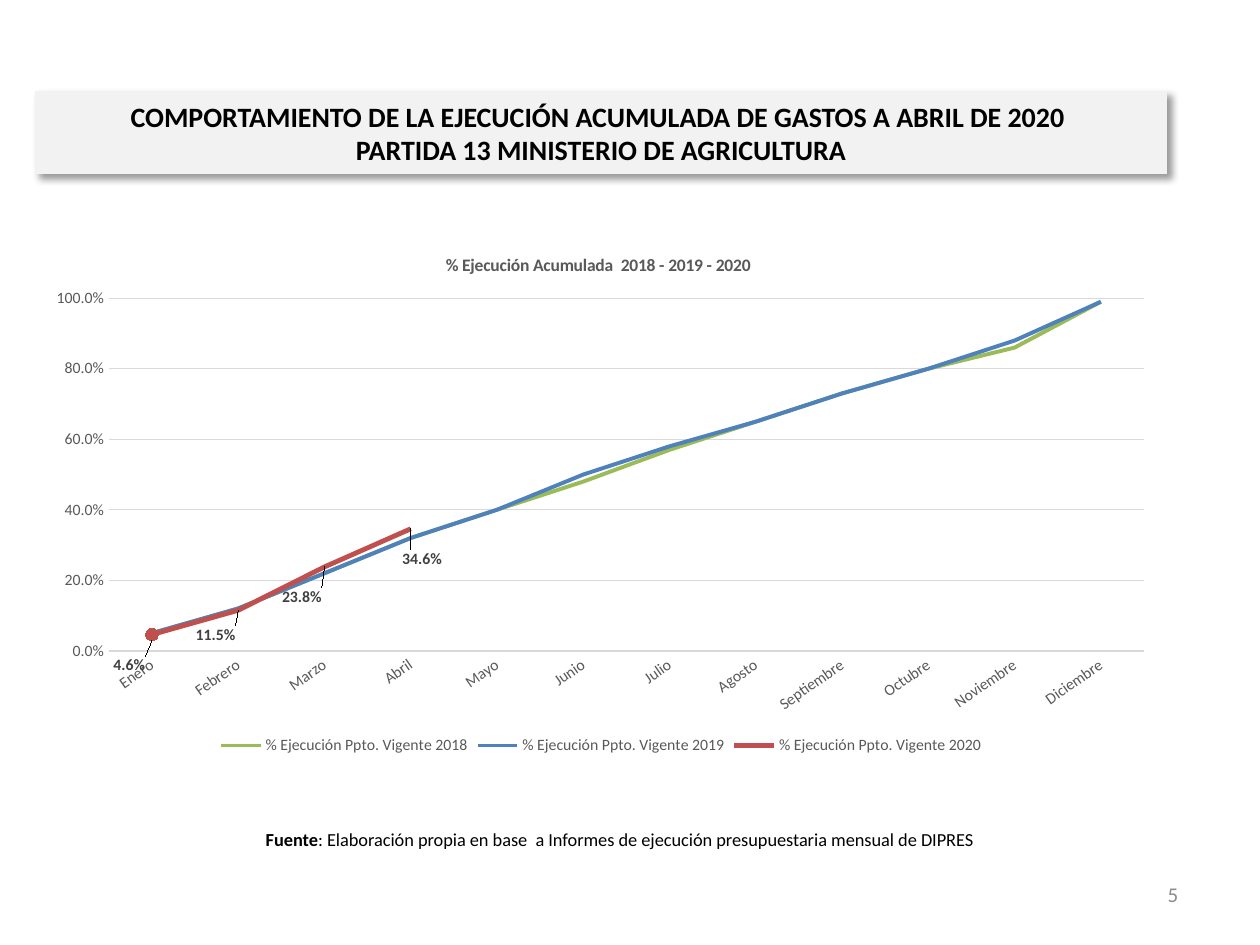
from lxml.etree import SubElement
from pptx import Presentation
from pptx.chart.data import CategoryChartData
from pptx.dml.color import RGBColor
from pptx.enum.chart import XL_CHART_TYPE as ChartType, XL_LEGEND_POSITION as LegendSpot
from pptx.enum.chart import XL_LABEL_POSITION as LabelSpot, XL_MARKER_STYLE as Marker, XL_TICK_MARK as Tick
from pptx.enum.shapes import MSO_SHAPE as Shape
from pptx.enum.text import MSO_ANCHOR as Anchor, PP_ALIGN as Align
from pptx.oxml.ns import qn
from pptx.util import Inches, Pt

FONT = "Calibri"
COLORS = {"black": "000000", "panel": "F2F2F2", "number": "8C8C8C", "axis": "595959",
          "grid": "D9D9D9", "label": "404040", "green": "9BBB59", "blue": "4F81BD", "red": "C0504D"}
HEADING = ["COMPORTAMIENTO DE LA EJECUCIÓN ACUMULADA DE GASTOS A ABRIL DE 2020 ",
           "PARTIDA 13 MINISTERIO DE AGRICULTURA"]
SOURCE = [("Fuente", True),
          (": Elaboración propia en base  a Informes de ejecución presupuestaria mensual de DIPRES", False)]
PAGE_NUMBER = "5"
CHART_TITLE = "% Ejecución Acumulada  2018 - 2019 - 2020"
MONTHS = ["Enero", "Febrero", "Marzo", "Abril", "Mayo", "Junio", "Julio", "Agosto",
          "Septiembre", "Octubre", "Noviembre", "Diciembre"]
SERIES = [
    (2018, "green", 2.25, [0.05, 0.12, 0.22, 0.32, 0.4, 0.48, 0.57, 0.65, 0.73, 0.8, 0.86, 0.99]),
    (2019, "blue", 2.25, [0.05, 0.12, 0.22, 0.32, 0.4, 0.5, 0.58, 0.65, 0.73, 0.8, 0.88, 0.99]),
    (2020, "red", 2.75, [0.046, 0.115, 0.238, 0.346]),
]
LABEL_OFFSETS = [(-0.02, 0.02), (-0.02, 0.02), (-0.02, 0.03), (0.01, 0.03)]
PERCENT = "0.0%"


def color(name):
    return RGBColor.from_string(COLORS[name])


def style_font(font, size, name, bold=False):
    font.name, font.size, font.bold = FONT, Pt(size), bold
    font.color.rgb = color(name)


def style_line(line, name, width):
    line.color.rgb = color(name)
    line.width = Pt(width)


def add_run(para, text, size, name, bold=False):
    span = para.add_run()
    span.text = text
    style_font(span.font, size, name, bold)


def add_text_box(page, bounds, align):
    box = page.shapes.add_textbox(*map(Inches, bounds))
    frame = box.text_frame
    frame.word_wrap = True
    frame.vertical_anchor = Anchor.MIDDLE
    para = frame.paragraphs[0]
    para.alignment = align
    return para


def set_layout(parent, index, **values):
    for old in parent.findall(qn("c:layout")):
        parent.remove(old)
    layout = SubElement(parent, qn("c:layout"))
    parent.insert(index, layout)
    manual = SubElement(layout, qn("c:manualLayout"))
    for tag, value in values.items():
        SubElement(manual, qn("c:" + tag)).set("val", str(value))


def add_heading(page):
    box = page.shapes.add_shape(Shape.RECTANGLE, *map(Inches, (0.28, 0.73, 8.98, 0.65)))
    box.fill.solid()
    box.fill.fore_color.rgb = color("panel")
    style_line(box.line, "panel", 0.75)
    box.shadow.inherit = False
    effects = box._element.spPr.find(qn("a:effectLst"))
    shadow = SubElement(effects, qn("a:outerShdw"), blurRad=str(Pt(4)), dist=str(Pt(3)),
                        dir="2700000", algn="tl", rotWithShape="0")
    tint = SubElement(shadow, qn("a:srgbClr"), val=COLORS["black"])
    SubElement(tint, qn("a:alpha"), val="40000")
    box.text_frame.word_wrap = True
    box.text_frame.vertical_anchor = Anchor.MIDDLE
    para = box.text_frame.paragraphs[0]
    para.alignment = Align.CENTER
    add_run(para, HEADING[0], 16, "black", True)
    para.add_line_break()
    add_run(para, HEADING[1], 16, "black", True)


def style_axes(chart):
    months, values = chart.category_axis, chart.value_axis
    for axis in (months, values):
        axis.major_tick_mark = axis.minor_tick_mark = Tick.NONE
        style_font(axis.tick_labels.font, 9, "axis")
    style_line(months.format.line, "grid", 1)
    months._element.find(qn("c:txPr")).find(qn("a:bodyPr")).set("rot", "-2100000")
    values.minimum_scale, values.maximum_scale, values.major_unit = 0, 1, 0.2
    values.tick_labels.number_format = PERCENT
    values.tick_labels.number_format_is_linked = False
    values.format.line.fill.background()
    style_line(values.major_gridlines.format.line, "grid", 0.75)


def label_points(series):
    labels = series.data_labels
    labels.show_value = True
    labels.number_format, labels.number_format_is_linked = PERCENT, False
    style_font(labels.font, 9, "label", True)
    for index, (x, y) in enumerate(LABEL_OFFSETS):
        label = series.points[index].data_label
        style_font(label.font, 9, "label", True)
        label.position = LabelSpot.BELOW
        set_layout(label._dLbl, 1, x=x, y=y)
    marker = series.points[0].marker
    marker.style, marker.size = Marker.CIRCLE, 7
    marker.format.fill.solid()
    marker.format.fill.fore_color.rgb = color("red")
    style_line(series.points[0].format.line, "red", 2.75)


def add_spending_chart(page):
    data = CategoryChartData(number_format=PERCENT)
    data.categories = MONTHS
    for year, _, _, values in SERIES:
        data.add_series(f"% Ejecución Ppto. Vigente {year}", values + [None] * (len(MONTHS) - len(values)))
    chart = page.shapes.add_chart(ChartType.LINE, *map(Inches, (0.28, 1.82, 8.98, 4.21)), data).chart
    style_font(chart.font, 10, "black")
    title = chart.chart_title
    add_run(title.text_frame.paragraphs[0], CHART_TITLE, 10, "axis", True)
    title.include_in_layout = False
    set_layout(title._element, 1, xMode="edge", yMode="edge", x=0.36, y=0.04)
    chart.has_legend = True
    chart.legend.position = LegendSpot.BOTTOM
    chart.legend.include_in_layout = False
    style_font(chart.legend.font, 9, "axis")
    style_axes(chart)
    plot = chart.plots[0]
    plot.vary_by_categories = False
    for series, (_, name, width, _) in zip(plot.series, SERIES):
        series.smooth = False
        series.marker.style = Marker.NONE
        style_line(series.format.line, name, width)
    label_points(plot.series[2])
    set_layout(chart._chartSpace.chart.plotArea, 0, layoutTarget="inner", xMode="edge", yMode="edge",
               x=0.065, y=0.13, w=0.915, h=0.665)


def main():
    """Build the slide on accumulated budget execution."""
    deck = Presentation()
    deck.slide_width, deck.slide_height = Inches(10), Inches(7.5)
    page = deck.slides.add_slide(deck.slide_layouts[6])
    add_run(add_text_box(page, (7.12, 6.9, 2.33, 0.4), Align.RIGHT), PAGE_NUMBER, 12, "number")
    add_heading(page)
    source = add_text_box(page, (1.02, 6.46, 7.8, 0.4), Align.CENTER)
    for text, bold in SOURCE:
        add_run(source, text, 10.5, "black", bold)
    add_spending_chart(page)
    deck.save("out.pptx")


if __name__ == "__main__":
    main()
